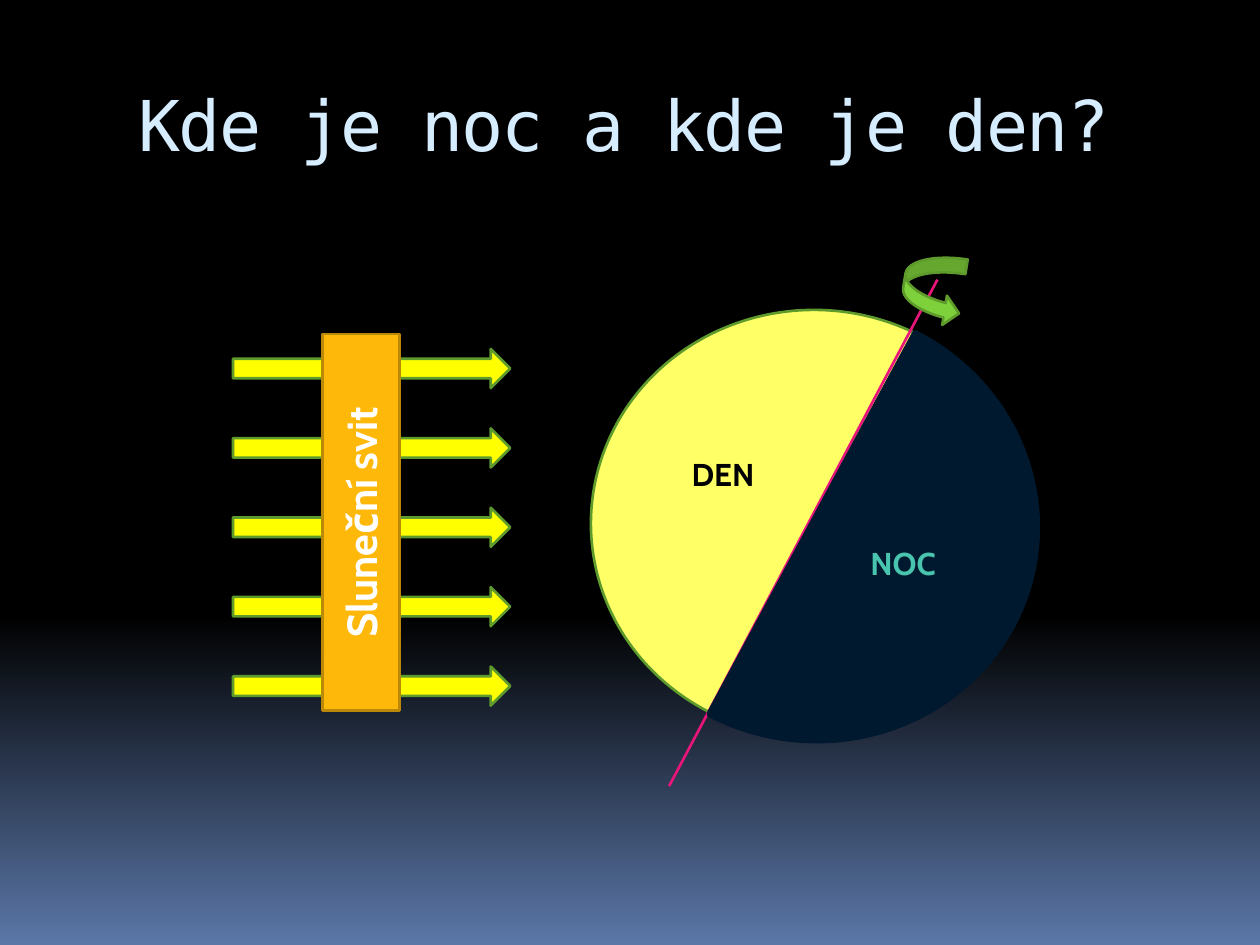
from copy import deepcopy

from pptx import Presentation
from pptx import util as u
from pptx.dml.color import RGBColor
from pptx.enum import shapes, text
from pptx.oxml.ns import qn

BLACK = RGBColor(0x00, 0x00, 0x00)
WHITE = RGBColor(0xFF, 0xFF, 0xFF)
HORIZON = RGBColor(0x5B, 0x77, 0xA8)
TITLE_BLUE = RGBColor(0xD6, 0xEC, 0xFF)
DAY = RGBColor(0xFF, 0xFF, 0x66)
NIGHT = RGBColor(0x00, 0x19, 0x2F)
TEAL = RGBColor(0x48, 0xC4, 0xAF)
RAY = RGBColor(0xFF, 0xFF, 0x00)
ORANGE = RGBColor(0xFE, 0xB8, 0x0A)
ORANGE_EDGE = RGBColor(0xBC, 0x88, 0x07)
GREEN = RGBColor(0x7F, 0xD1, 0x3B)
GREEN_EDGE = RGBColor(0x5E, 0x9B, 0x2C)
AXIS_PINK = RGBColor(0xEA, 0x15, 0x7A)

BODY_FONT = "Cabin"
TITLE_FONT = "DejaVu Sans Mono"


def inches(*lengths):
    return [u.Inches(length) for length in lengths]


def add_shape(parent, kind, box, fill, edge, weight=1.5):
    shape = parent.add_shape(kind, *inches(*box))
    shape.shadow.inherit = False
    shape.fill.solid()
    shape.fill.fore_color.rgb = fill
    shape.line.color.rgb = edge
    shape.line.width = u.Pt(weight)
    return shape


def write(frame, words, size, color, align):
    frame.word_wrap = True
    frame.vertical_anchor = text.MSO_ANCHOR.MIDDLE
    para = frame.paragraphs[0]
    para.text = words
    para.alignment = align
    para.font.name = BODY_FONT
    para.font.size = u.Pt(size)
    para.font.bold = True
    para.font.color.rgb = color


def paint_background(page):
    fill = page.background.fill
    fill.gradient()
    fill.gradient_angle = 270
    stop_list = page._element.find(".//" + qn("a:gsLst"))
    stop_list.append(deepcopy(stop_list[-1]))
    stops = [(0, BLACK), (0.65, BLACK), (1, HORIZON)]
    for stop, (position, color) in zip(fill.gradient_stops, stops):
        stop.position = position
        stop.color.rgb = color


def set_title(page, box):
    title = page.shapes.title
    title.left, title.top, title.width, title.height = inches(*box)
    frame = title.text_frame
    frame.word_wrap = True
    frame.vertical_anchor = text.MSO_ANCHOR.TOP
    frame.margin_top = u.Inches(0.09)
    para = frame.paragraphs[0]
    para.alignment = text.PP_ALIGN.LEFT
    span = para.add_run()
    span.text = "Kde je noc a kde je den?"
    span.font.name = TITLE_FONT
    span.font.size = u.Pt(40)
    span.font.color.rgb = TITLE_BLUE
    span._r.get_or_add_rPr().set("spc", "-100")


def draw_sunlight(page, box, rays=5):
    """Evenly spaced rays with an upright label across them."""
    left, top, width, height = box
    ray_height = 0.31
    step = (height - ray_height) / (rays - 1)
    group = page.shapes.add_group_shape()
    for row in range(rays):
        add_shape(group.shapes, shapes.MSO_SHAPE.RIGHT_ARROW,
                  (left, top + row * step, width, ray_height), RAY, GREEN_EDGE)

    label = add_shape(page.shapes, shapes.MSO_SHAPE.RECTANGLE,
                      (left + 0.71, top - 0.12, 0.61, height + 0.16),
                      ORANGE, ORANGE_EDGE)
    write(label.text_frame, "Sluneční svit", 24, WHITE, text.PP_ALIGN.CENTER)
    label.text_frame._txBody.bodyPr.set("vert", "vert270")


def draw_earth(page, box):
    """Day disc, tilted axis, spin arrow and night half."""
    left, top, width, height = box
    add_shape(page.shapes, shapes.MSO_SHAPE.OVAL, box, DAY, GREEN_EDGE)

    # Axis and direction of spin
    axis = page.shapes.add_connector(
        shapes.MSO_CONNECTOR.STRAIGHT,
        *inches(left + 2.75, top - 0.24, left + 0.62, top + 3.78))
    axis.line.color.rgb = AXIS_PINK
    axis.line.width = u.Pt(1.5)
    properties = axis._element.spPr
    properties.append(properties.makeelement(qn("a:effectLst"), {}))
    spin = add_shape(page.shapes, shapes.MSO_SHAPE.CURVED_RIGHT_ARROW,
                     (left + 2.48, top - 0.44, 0.47, 0.55), GREEN, GREEN_EDGE)
    spin.rotation = 9.1

    # Night half and labels
    group = page.shapes.add_group_shape()
    night = add_shape(group.shapes, shapes.MSO_SHAPE.CHORD,
                      (left - 0.01, top - 0.01, width + 0.01, height + 0.03),
                      NIGHT, NIGHT, 4)
    night.adjustments[0] = 43.9
    night.adjustments[1] = 152.12
    night.rotation = 11.7
    night._element.spPr.xfrm.set("flipH", "1")
    for words, across, down, color in [("NOC", 2.12, 1.81, TEAL),
                                       ("DEN", 0.7, 1.1, BLACK)]:
        label = group.shapes.add_textbox(
            *inches(left + across, top + down, 0.79, 0.4))
        write(label.text_frame, words, 18, color, text.PP_ALIGN.LEFT)


def main():
    deck = Presentation()
    deck.slide_width, deck.slide_height = inches(10, 7.5)
    page = deck.slides.add_slide(deck.slide_layouts[5])
    paint_background(page)
    set_title(page, (1, 0.56, 8.5, 1))
    draw_sunlight(page, (1.85, 2.77, 2.2, 2.83))
    draw_earth(page, (4.69, 2.46, 3.54, 3.39))
    deck.save("out.pptx")


if __name__ == "__main__":
    main()
